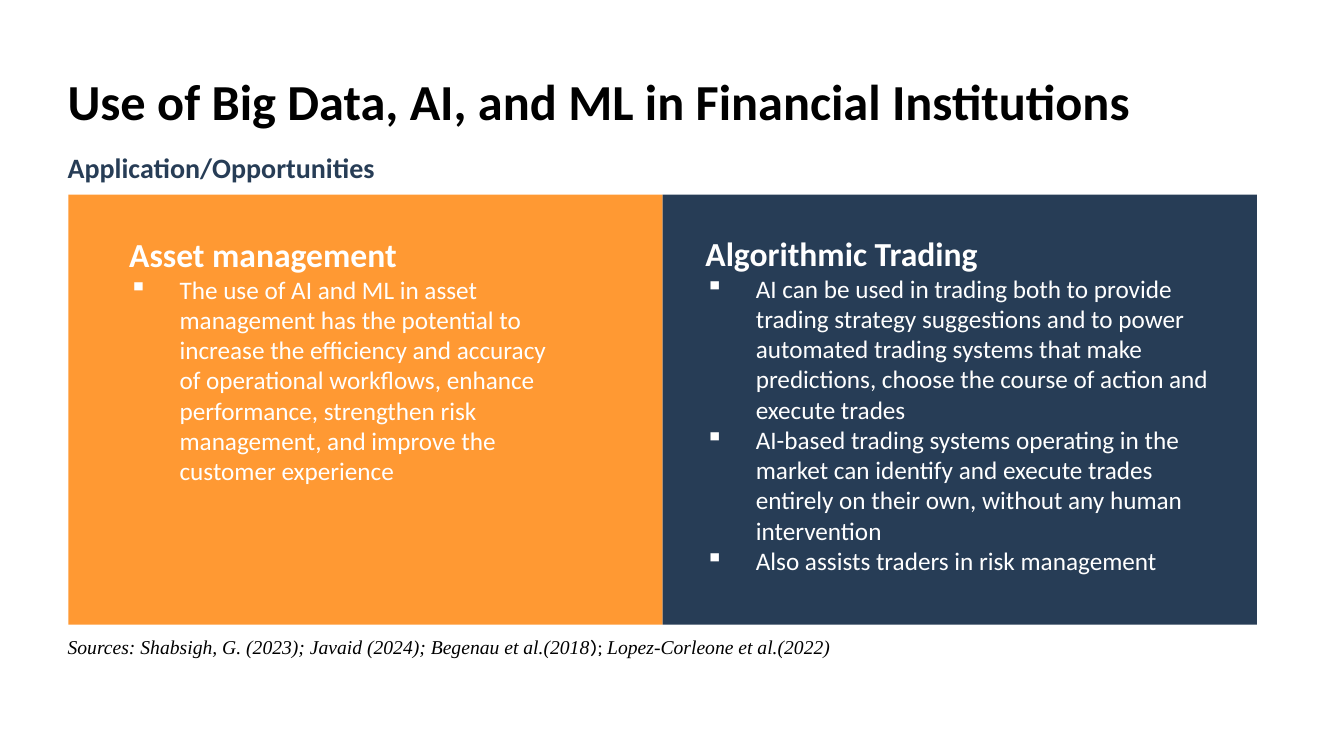
from dataclasses import dataclass

from lxml.etree import SubElement
from pptx import Presentation
from pptx.dml.color import RGBColor as RGB
from pptx.enum.shapes import MSO_SHAPE as SHAPE
from pptx.enum.text import MSO_ANCHOR as ANCHOR
from pptx.oxml.ns import qn
from pptx.util import Pt

COLORS = {"orange": "FF9933", "navy": "273D56", "white": "FFFFFF", "black": "000000"}
PANEL_LEFT, PANEL_TOP, PANEL_WIDTH, PANEL_HEIGHT = 48.8, 139, 424.5, 307.2
TEXT_LEFT = 41.2
BULLET_INDENT = 36


@dataclass(frozen=True)
class Box:
    left: float
    top: float
    width: float
    height: float


@dataclass(frozen=True)
class Run:
    text: str
    size: float
    color: str
    font: str = "Calibri"
    bold: bool = False
    italic: bool = False


@dataclass(frozen=True)
class Panel:
    fill: str
    text_box: Box
    heading: str
    bullets: tuple[str, ...]


PANELS = (
    Panel("orange", Box(85.2, 163.4, 329, 189.4), "Asset management", (
        "The use of AI and ML in asset management has the potential to increase the "
        "efficiency and accuracy of operational workflows, enhance performance, "
        "strengthen risk management, and improve the customer experience",
    )),
    Panel("navy", Box(496.8, 162.7, 378, 260), "Algorithmic Trading", (
        "AI can be used in trading both to provide trading strategy suggestions and to "
        "power automated trading systems that make predictions, choose the course of "
        "action and execute trades",
        "AI-based trading systems operating in the market can identify and execute "
        "trades entirely on their own, without any human intervention",
        "Also assists traders in risk management",
    )),
)

TITLE = Run("Use of Big Data, AI, and ML in Financial Institutions", 36, "black", bold=True)
SUBTITLE = Run("Application/Opportunities", 20, "navy", bold=True)
SOURCES = (
    Run("Sources: Shabsigh, G. (2023); Javaid (2024); Begenau et al.(2018", 14, "black",
        "Times New Roman", italic=True),
    Run("); ", 14, "black", "Karla"),
    Run("Lopez-Corleone et al.(2022)", 14, "black", "Times New Roman", italic=True),
)


def add_runs(p, *runs: Run) -> None:
    for run in runs:
        r = p.add_run()
        r.text = run.text
        font = r.font
        font.name, font.size = run.font, Pt(run.size)
        font.bold, font.italic = run.bold, run.italic
        font.color.rgb = RGB.from_string(COLORS[run.color])


def add_text(s, box: Box, *runs: Run):
    tf = s.shapes.add_textbox(
        Pt(box.left), Pt(box.top), Pt(box.width), Pt(box.height)).text_frame
    tf.word_wrap = True
    add_runs(tf.paragraphs[0], *runs)
    return tf


def set_bullet(p) -> None:
    pPr = p._p.get_or_add_pPr()
    pPr.set("marL", str(Pt(BULLET_INDENT)))
    pPr.set("indent", str(-Pt(BULLET_INDENT)))
    SubElement(pPr, qn("a:buChar")).set("char", "▪")


def add_background(s, panel: Panel, index: int) -> None:
    sp = s.shapes.add_shape(
        SHAPE.RECTANGLE, Pt(PANEL_LEFT + index * PANEL_WIDTH), Pt(PANEL_TOP),
        Pt(PANEL_WIDTH), Pt(PANEL_HEIGHT))
    sp.shadow.inherit = False
    sp.fill.solid()
    sp.fill.fore_color.rgb = RGB.from_string(COLORS[panel.fill])
    sp.line.fill.background()


def add_panel_text(s, panel: Panel) -> None:
    tf = add_text(s, panel.text_box, Run(panel.heading, 24, "white", bold=True))
    for bullet in panel.bullets:
        p = tf.add_paragraph()
        set_bullet(p)
        add_runs(p, Run(bullet, 18, "white"))


def main() -> None:
    prs = Presentation()
    prs.slide_width, prs.slide_height = Pt(960), Pt(540)
    s = prs.slides.add_slide(prs.slide_layouts[6])
    for index, panel in enumerate(PANELS):
        add_background(s, panel, index)
    title = add_text(s, Box(TEXT_LEFT, 54.7, 911.5, 39.6), TITLE)
    title.vertical_anchor = ANCHOR.MIDDLE
    title.paragraphs[0].line_spacing = 0.9
    add_text(s, Box(TEXT_LEFT, 103.7, 457.2, 27.4), SUBTITLE)
    add_text(s, Box(TEXT_LEFT, 450, 843.8, 24.5), *SOURCES)
    for panel in PANELS:
        add_panel_text(s, panel)
    prs.save("out.pptx")


if __name__ == "__main__":
    main()
